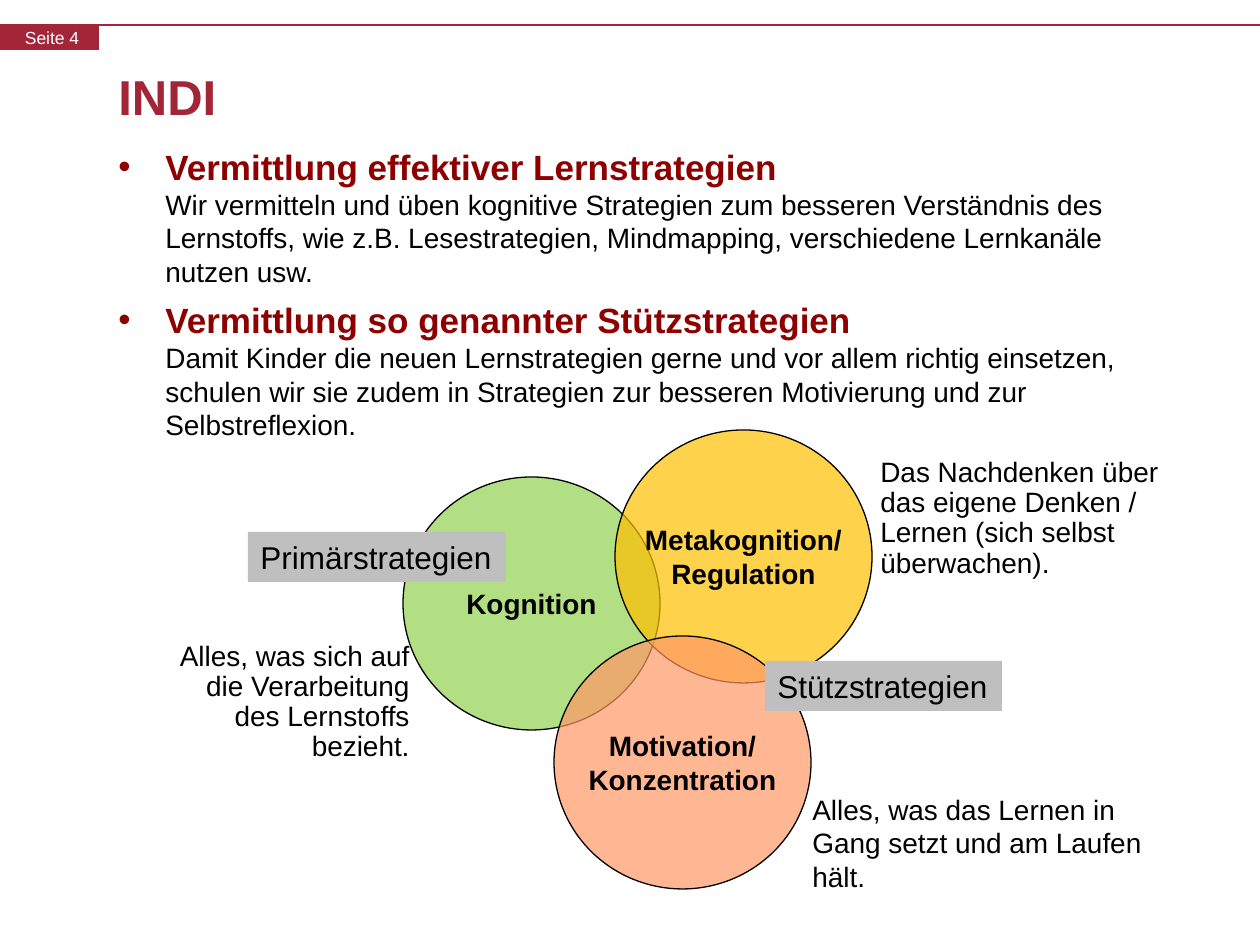
from lxml.etree import SubElement
from pptx import Presentation
from pptx.dml.color import RGBColor
from pptx.enum.shapes import MSO_CONNECTOR, MSO_SHAPE
from pptx.enum.text import MSO_ANCHOR, PP_ALIGN
from pptx.oxml.ns import qn
from pptx.util import Pt

PX = 914400 / 126
THEME = {
    "font": "Arial",
    "accent": "A32638", "heading": "8E0000", "text": "000000",
    "light": "FFFFFF", "label": "BFBFBF",
    "green": "92D050", "yellow": "FFC000", "orange": "FF9966",
    "title": 28, "head": 20, "tag": 18, "body": 16, "page": 10,
}


def px(*values):
    return [round(v * PX) for v in values]


def write(p, text, size="body", color="text", bold=False, **fmt):
    """Add text to a paragraph; a newline becomes a line break."""
    for name, value in fmt.items():
        setattr(p, name, value)
    for i, part in enumerate(text.split("\n")):
        if i:
            p.add_line_break()
        r = p.add_run()
        r.text = part
        look = {"name": THEME["font"], "size": Pt(THEME[size]), "bold": bold}
        for name, value in look.items():
            setattr(r.font, name, value)
        r.font.color.rgb = RGBColor.from_string(THEME[color])


prs = Presentation()
prs.slide_width, prs.slide_height = px(1260, 945)
s = prs.slides.add_slide(prs.slide_layouts[6])

# Header rule and page tag
rule = s.shapes.add_connector(MSO_CONNECTOR.STRAIGHT, *px(0, 25, 1260, 25))
rule.line.color.rgb = RGBColor.from_string(THEME["accent"])
rule.line.width = Pt(0.75)
SubElement(rule._element.spPr, qn("a:effectLst"))

sp = s.shapes.add_shape(MSO_SHAPE.RECTANGLE, *px(0, 25, 99, 25))
sp.shadow.inherit = False
sp.fill.solid()
sp.fill.fore_color.rgb = RGBColor.from_string(THEME["accent"])
sp.line.fill.background()

tf = s.shapes.add_textbox(*px(25, 27, 78, 42)).text_frame
for side in ("left", "top", "right", "bottom"):
    setattr(tf, f"margin_{side}", 0)
write(tf.paragraphs[0], "Seite 4", "page", "light")

# Title
tf = s.shapes.add_textbox(*px(106, 59, 1075, 91)).text_frame
tf.word_wrap = True
tf.vertical_anchor = MSO_ANCHOR.MIDDLE
write(tf.paragraphs[0], "INDI", "title", "accent", True, line_spacing=Pt(24))

# Bulleted body
points = [
    ("Vermittlung effektiver Lernstrategien",
     "Wir vermitteln und üben kognitive Strategien zum besseren Verständnis des "
     "Lernstoffs, wie z.B. Lesestrategien, Mindmapping, verschiedene Lernkanäle "
     "nutzen usw."),
    ("Vermittlung so genannter Stützstrategien",
     "Damit Kinder die neuen Lernstrategien gerne und vor allem richtig einsetzen, "
     "schulen wir sie zudem in Strategien zur besseren Motivierung und zur "
     "Selbstreflexion."),
]
tf = s.shapes.add_textbox(*px(106, 139, 1040, 504)).text_frame
tf.word_wrap = True
indent = px(47)[0]
for i, (head, detail) in enumerate(points):
    p = tf.add_paragraph() if i else tf.paragraphs[0]
    write(p, head, "head", "heading", True, space_after=Pt(6))
    p.add_line_break()
    write(p, detail)
    pPr = p._p.get_or_add_pPr()
    pPr.set("marL", str(indent))
    pPr.set("indent", str(-indent))
    SubElement(pPr, qn("a:buFont"), typeface=THEME["font"])
    SubElement(pPr, qn("a:buChar"), char="•")

# Overlapping circles
circles = [
    (403, 477, "green", ["Kognition"]),
    (615, 430, "yellow", ["Metakognition/", "Regulation"]),
    (554, 636, "orange", ["Motivation/", "Konzentration"]),
]
for x, y, color, lines in circles:
    sp = s.shapes.add_shape(MSO_SHAPE.OVAL, *px(x, y, 257, 253))
    sp.shadow.inherit = False
    sp.fill.solid()
    sp.fill.fore_color.rgb = RGBColor.from_string(THEME[color])
    rgb = sp._element.spPr.find(qn("a:solidFill"))[0]
    SubElement(rgb, qn("a:alpha"), val="70000")
    sp.line.color.rgb = RGBColor.from_string(THEME["text"])
    sp.line.width = Pt(0.75)
    tf = sp.text_frame
    tf.word_wrap = False
    tf.vertical_anchor = MSO_ANCHOR.MIDDLE
    for i, line in enumerate(lines):
        p = tf.add_paragraph() if i else tf.paragraphs[0]
        write(p, line, bold=True, alignment=PP_ALIGN.CENTER)

# Grey strategy labels
for x, y, w, text in [(248, 532, 258, "Primärstrategien"),
                      (765, 661, 237, "Stützstrategien")]:
    sp = s.shapes.add_shape(MSO_SHAPE.RECTANGLE, *px(x, y, w, 50))
    sp.shadow.inherit = False
    sp.fill.solid()
    sp.fill.fore_color.rgb = RGBColor.from_string(THEME["label"])
    sp.line.fill.background()
    sp.text_frame.word_wrap = False
    write(sp.text_frame.paragraphs[0], text, "tag", alignment=PP_ALIGN.LEFT)

# Explanations beside the circles
notes = [
    (155, 636, 267, 135, PP_ALIGN.RIGHT, 0.9,
     "Alles, was sich auf die Verarbeitung des Lernstoffs bezieht."),
    (868, 452, 338, 135, PP_ALIGN.LEFT, 0.9,
     "Das Nachdenken über das eigene Denken / Lernen (sich selbst\nüberwachen)."),
    (800, 786, 362, 115, PP_ALIGN.LEFT, 1.0,
     "Alles, was das Lernen in Gang setzt und am Laufen hält."),
]
for x, y, w, h, align, spacing, text in notes:
    tf = s.shapes.add_textbox(*px(x, y, w, h)).text_frame
    tf.word_wrap = True
    write(tf.paragraphs[0], text, alignment=align, line_spacing=spacing)

prs.save("out.pptx")
